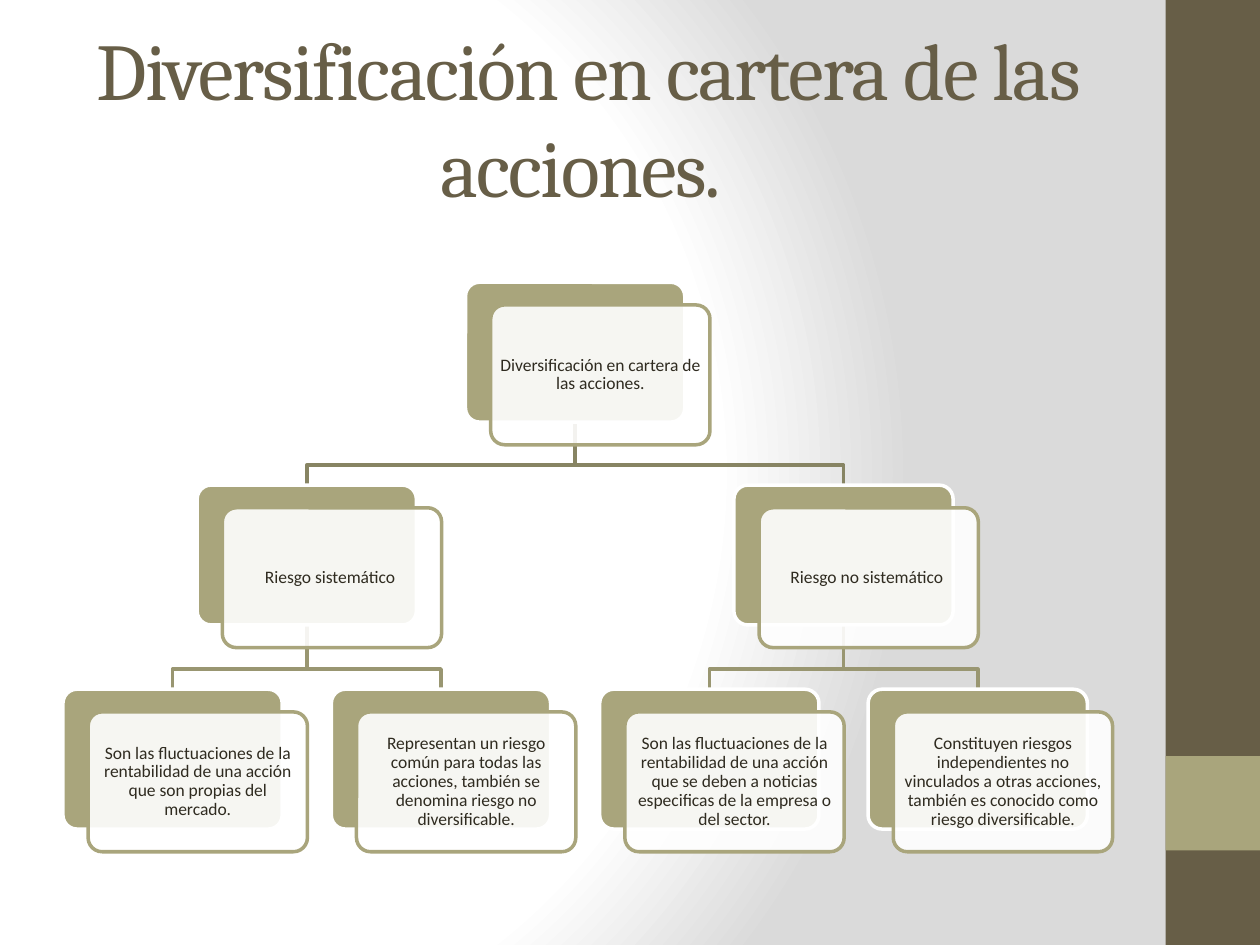
from lxml import etree
from pptx import Presentation
from pptx.dml.color import RGBColor
from pptx.enum.shapes import MSO_SHAPE as SHAPE
from pptx.enum.text import MSO_ANCHOR as ANCHOR, MSO_AUTO_SIZE as AUTOSIZE, PP_ALIGN as ALIGN
from pptx.oxml.ns import qn
from pptx.util import Inches, Pt

# Content: each node is (text, children)
TITLE = "Diversificación en cartera de las acciones. "
TREE = ("Diversificación en cartera de las acciones.", [
    ("Riesgo sistemático ", [
        ("Son las fluctuaciones de la rentabilidad de una acción que son propias del mercado.", []),
        ("Representan un riesgo común para todas las acciones, también se denomina riesgo no "
         "diversificable.", []),
    ]),
    ("Riesgo no sistemático ", [
        ("Son las fluctuaciones de la rentabilidad de una acción que se deben a noticias "
         "especificas de la empresa o del sector.", []),
        ("Constituyen riesgos independientes no vinculados a otras acciones, también es conocido "
         "como riesgo diversificable.", []),
    ]),
])

COLORS = {"brown": "675E47", "olive": "A9A57C", "white": "FFFFFF", "ink": "2F2B20"}
LINK_COLORS = ["878463", "999671"]  # by level of the parent
BACKGROUND = [(0, "FFFFFF"), (75, "FFFFFF"), (100, "DADADA")]

# Grid in inches
SLIDE_W, SLIDE_H = 10, 7.5
BAND_X, BAND_W = 9.25, 0.75
LEAF_X, LEAF_PITCH = 0.5, 2.13
LEVEL_TOPS = [2.24, 3.85, 5.47]
CARD_W, CARD_H = 1.74, 1.11
OFFSET_X, OFFSET_Y = 0.2, 0.18
BEND_RISE = 0.16  # height of the crossbar above the child card


def rgb(value):
    return RGBColor.from_string(value)


def add_box(kind, x, y, w, h, fill, line=None):
    box = slide.shapes.add_shape(kind, Inches(x), Inches(y), Inches(w), Inches(h))
    box.shadow.inherit = False
    box.fill.solid()
    box.fill.fore_color.rgb = rgb(fill)
    if line:
        box.line.color.rgb = rgb(line)
        box.line.width = Pt(2)
    else:
        box.line.fill.background()
    return box


def format_text(paragraph, font, size, color):
    paragraph.alignment = ALIGN.CENTER
    for run in paragraph.runs:
        run.font.name = font
        run.font.size = Pt(size)
        run.font.color.rgb = rgb(color)


def place(node, level=0):
    """Give every node a left edge: leaves in columns, parents centred above children."""
    text, children = node
    below = [place(child, level + 1) for child in children]
    if below:
        x = (below[0]["x"] + below[-1]["x"]) / 2
    else:
        x = LEAF_X + LEAF_PITCH * sum(not card["below"] for card in cards)
    card = {"text": text, "x": x, "level": level, "below": below}
    cards.append(card)
    return card


def add_link(parent, child):
    start_x, end_x = (Inches(card["x"] + CARD_W / 2) for card in (parent, child))
    start_y = Inches(LEVEL_TOPS[parent["level"]] + CARD_H)
    end_y = Inches(LEVEL_TOPS[child["level"]])
    bend_y = end_y - Inches(BEND_RISE)
    builder = slide.shapes.build_freeform(start_x, start_y)
    builder.add_line_segments([(start_x, bend_y), (end_x, bend_y), (end_x, end_y)], close=False)
    link = builder.convert_to_shape()
    link.shadow.inherit = False
    link.fill.background()
    link.line.color.rgb = rgb(LINK_COLORS[parent["level"]])
    link.line.width = Pt(2)


def add_card(card):
    x, y = card["x"], LEVEL_TOPS[card["level"]]
    back = add_box(SHAPE.ROUNDED_RECTANGLE, x, y, CARD_W, CARD_H,
                   COLORS["olive"], COLORS["white"])
    front = add_box(SHAPE.ROUNDED_RECTANGLE, x + OFFSET_X, y + OFFSET_Y, CARD_W, CARD_H,
                    COLORS["white"], COLORS["olive"])
    back.adjustments[0] = front.adjustments[0] = 0.1
    white = front.fill._xPr.find(qn("a:solidFill"))[0]
    etree.SubElement(white, qn("a:alpha"), val="90000")

    frame = front.text_frame
    frame.word_wrap = True
    frame.vertical_anchor = ANCHOR.MIDDLE
    frame.margin_left = frame.margin_right = Inches(0.04)
    frame.margin_top = frame.margin_bottom = Inches(0.04)
    frame.text = card["text"]
    frame.paragraphs[0].line_spacing = 0.9
    format_text(frame.paragraphs[0], "Calibri", 10, COLORS["ink"])


deck = Presentation()
deck.slide_width, deck.slide_height = Inches(SLIDE_W), Inches(SLIDE_H)
slide = deck.slides.add_slide(deck.slide_layouts[5])

# Radial background
slide.background.fill.gradient()
gradient = next(slide.element.iter(qn("a:gradFill")))
for part in list(gradient):
    gradient.remove(part)
stops = etree.SubElement(gradient, qn("a:gsLst"))
for position, color in BACKGROUND:
    stop = etree.SubElement(stops, qn("a:gs"), pos=str(position * 1000))
    etree.SubElement(stop, qn("a:srgbClr"), val=color)
circle = etree.SubElement(gradient, qn("a:path"), path="circle")
etree.SubElement(circle, qn("a:fillToRect"), l="20000", t="50000", r="100000", b="50000")

# Side band
add_box(SHAPE.RECTANGLE, BAND_X, 0, BAND_W, SLIDE_H, COLORS["brown"])
add_box(SHAPE.RECTANGLE, BAND_X, SLIDE_H * 0.8, BAND_W, BAND_W, COLORS["olive"])

# Title
title = slide.shapes.title
title.left, title.top, title.width, title.height = map(Inches, (0.5, 0.3, 8.33, 1.25))
title.text_frame.text = TITLE
title.text_frame.auto_size = AUTOSIZE.NONE
title.text_frame.vertical_anchor = ANCHOR.MIDDLE
heading = title.text_frame.paragraphs[0]
format_text(heading, "Cambria", 46, COLORS["brown"])
heading.runs[0].font._element.set("spc", "-100")

# Hierarchy: links behind the cards
cards = []
place(TREE)
for card in cards:
    for child in card["below"]:
        add_link(card, child)
for card in cards:
    add_card(card)

deck.save("out.pptx")
